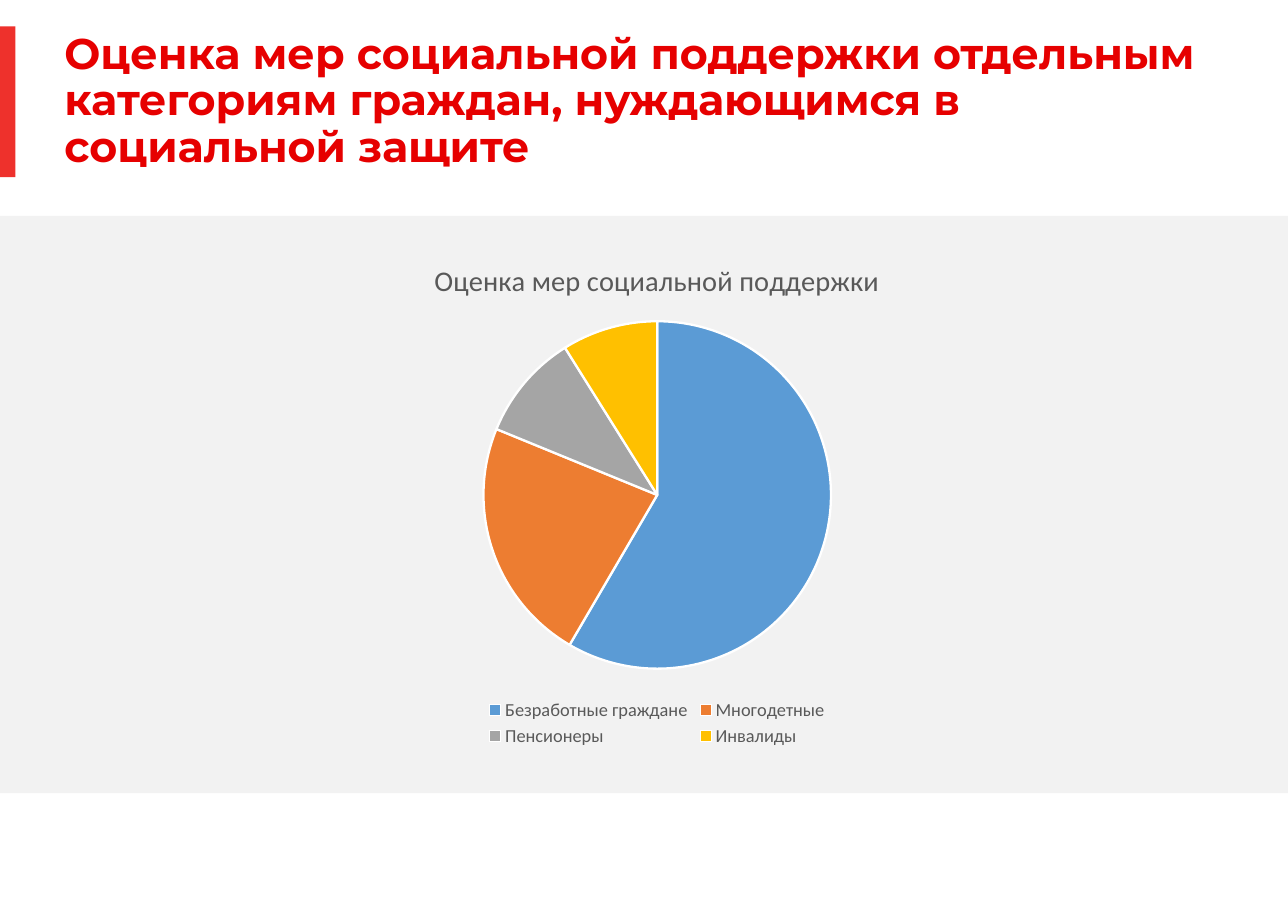
import pptx
import pptx.chart.data
import pptx.dml.color
import pptx.enum.chart
import pptx.enum.shapes
import pptx.enum.text
import pptx.oxml
import pptx.oxml.ns
import pptx.util

Pt = pptx.util.Pt
RGBColor = pptx.dml.color.RGBColor

PANEL_GRAY = RGBColor(0xF2, 0xF2, 0xF2)
ACCENT_RED = RGBColor(0xEE, 0x31, 0x2C)
HEADING_RED = RGBColor(0xE6, 0x00, 0x00)
CHART_TEXT = RGBColor(0x59, 0x59, 0x59)
WHITE = RGBColor(0xFF, 0xFF, 0xFF)
BLUE = RGBColor(0x5B, 0x9B, 0xD5)
ORANGE = RGBColor(0xED, 0x7D, 0x31)
GRAY = RGBColor(0xA5, 0xA5, 0xA5)
YELLOW = RGBColor(0xFF, 0xC0, 0x00)

CATEGORIES = [
    ("Безработные граждане", 59, BLUE),
    ("Многодетные", 23, ORANGE),
    ("Пенсионеры", 10, GRAY),
    ("Инвалиды", 9, YELLOW),
]


def set_layout(parent, index, target, x, y, w, h):
    for old_layout in parent.findall(pptx.oxml.ns.qn("c:layout")):
        parent.remove(old_layout)
    parent.insert(index, pptx.oxml.parse_xml(
        f'<c:layout {pptx.oxml.ns.nsdecls("c")}><c:manualLayout>{target}'
        '<c:xMode val="edge"/><c:yMode val="edge"/>'
        f'<c:x val="{x}"/><c:y val="{y}"/><c:w val="{w}"/><c:h val="{h}"/>'
        '</c:manualLayout></c:layout>'))


presentation = pptx.Presentation()
presentation.slide_width = Pt(841.68)
presentation.slide_height = Pt(595.44)
slide = presentation.slides.add_slide(presentation.slide_layouts[6])

for left, top, width, height, color in [
    (0, 141.2, 841.68, 377.3, PANEL_GRAY),
    (0, 17.2, 10, 98.7, ACCENT_RED),
]:
    band = slide.shapes.add_shape(
        pptx.enum.shapes.MSO_SHAPE.RECTANGLE, Pt(left), Pt(top), Pt(width), Pt(height))
    band.shadow.inherit = False
    band.fill.solid()
    band.fill.fore_color.rgb = color
    band.line.fill.background()

heading = slide.shapes.add_textbox(Pt(42), Pt(20.9), Pt(762.5), Pt(91.4)).text_frame
heading.word_wrap = True
heading.vertical_anchor = pptx.enum.text.MSO_ANCHOR.MIDDLE
heading.margin_left = heading.margin_right = 0
heading.margin_top = heading.margin_bottom = 0
heading.paragraphs[0].line_spacing = 0.9
heading_run = heading.paragraphs[0].add_run()
heading_run.text = (
    "Оценка мер социальной поддержки отдельным категориям граждан, "
    "нуждающимся в социальной защите")
heading_run.font.name = "Montserrat"
heading_run.font.size = Pt(28)
heading_run.font.bold = True
heading_run.font.color.rgb = HEADING_RED

support_data = pptx.chart.data.CategoryChartData()
support_data.categories = [name for name, share, color in CATEGORIES]
support_data.add_series("Series 1", [share for name, share, color in CATEGORIES])
support_pie = slide.shapes.add_chart(
    pptx.enum.chart.XL_CHART_TYPE.PIE,
    Pt(171.4), Pt(156.2), Pt(516.2), Pt(334.8), support_data).chart
support_pie.font.name = "Calibri"
support_pie.font.size = Pt(10)

support_pie.has_title = True
pie_title = support_pie.chart_title.text_frame.paragraphs[0].add_run()
pie_title.text = "Оценка мер социальной поддержки"
pie_title.font.name = "Calibri"
pie_title.font.size = Pt(18.6)
pie_title.font.bold = False
pie_title.font.color.rgb = CHART_TEXT
support_pie.chart_title.include_in_layout = False

support_pie.has_legend = True
support_pie.legend.position = pptx.enum.chart.XL_LEGEND_POSITION.BOTTOM
support_pie.legend.include_in_layout = False
support_pie.legend.font.name = "Calibri"
support_pie.legend.font.size = Pt(12)
support_pie.legend.font.color.rgb = CHART_TEXT

support_pie.plots[0].vary_by_categories = True
for index, (name, share, color) in enumerate(CATEGORIES):
    slice_format = support_pie.plots[0].series[0].points[index].format
    slice_format.fill.solid()
    slice_format.fill.fore_color.rgb = color
    slice_format.line.color.rgb = WHITE
    slice_format.line.width = Pt(1.5)

plot_area = support_pie.element.xpath("c:chart/c:plotArea")[0]
legend_area = support_pie.element.xpath("c:chart/c:legend")[0]
set_layout(plot_area, 0, '<c:layoutTarget val="inner"/>', 0.28, 0.16, 0.44, 0.68)
set_layout(legend_area, 1, "", 0.28, 0.89, 0.44, 0.11)

presentation.save("out.pptx")
